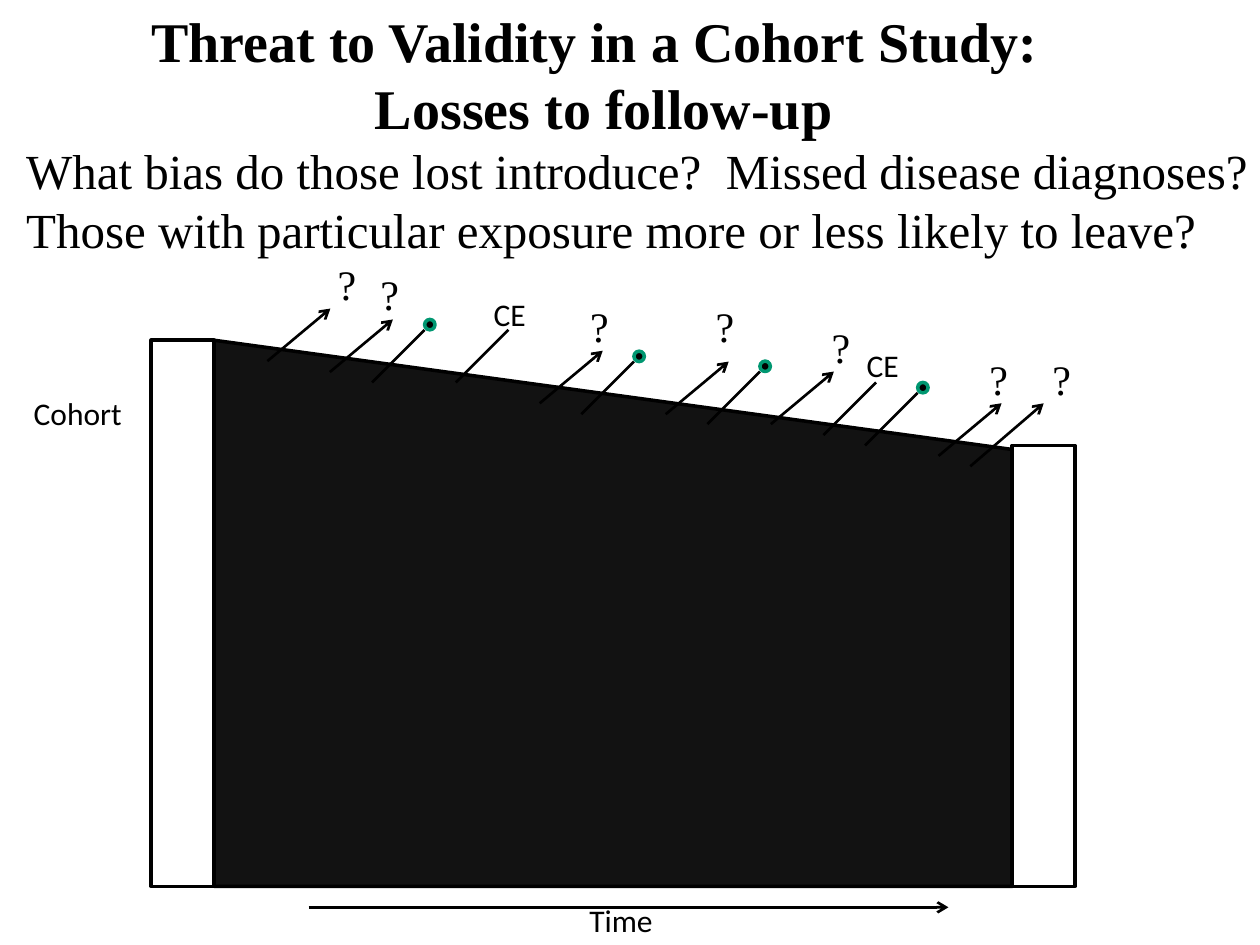
from dataclasses import dataclass

from lxml import etree
from pptx import Presentation
from pptx.dml.color import RGBColor
from pptx.enum.shapes import MSO_CONNECTOR, MSO_SHAPE
from pptx.enum.text import MSO_ANCHOR, MSO_AUTO_SIZE, PP_ALIGN
from pptx.oxml.ns import qn
from pptx.util import Cm, Pt

STRAIGHT = MSO_CONNECTOR.STRAIGHT
RECTANGLE = MSO_SHAPE.RECTANGLE
OVAL = MSO_SHAPE.OVAL
SLOPED_TOP = MSO_SHAPE.FLOWCHART_MANUAL_INPUT
TOP, MIDDLE = MSO_ANCHOR.TOP, MSO_ANCHOR.MIDDLE
LEFT, CENTER = PP_ALIGN.LEFT, PP_ALIGN.CENTER
FIT_SHAPE = MSO_AUTO_SIZE.SHAPE_TO_FIT_TEXT


@dataclass(frozen=True)
class Theme:
    ink: RGBColor = RGBColor(0x00, 0x00, 0x00)
    paper: RGBColor = RGBColor(0xFF, 0xFF, 0xFF)
    follow_up: RGBColor = RGBColor(0x12, 0x12, 0x12)
    diagnosis: RGBColor = RGBColor(0x00, 0x97, 0x71)
    serif: str = "Times New Roman"
    sans: str = "Calibri"
    title_size: float = 32
    body_size: float = 28
    mark_size: float = 24
    label_size: float = 18
    outline: float = 2
    stroke: float = 1.5


THEME = Theme()


@dataclass(frozen=True)
class Line:
    """One paragraph of text; indent is in centimetres."""
    text: str
    size: float
    font: str
    bold: bool = False
    indent: float = 0
    align: PP_ALIGN = LEFT


@dataclass(frozen=True)
class Box:
    """A position and size in centimetres."""
    left: float
    top: float
    width: float
    height: float


@dataclass(frozen=True)
class Loss:
    """A person lost to follow-up: an arrow out and a question mark."""
    x: float
    y: float
    mark_left: float
    mark_top: float
    run: float = 1.27
    rise: float = 1.06


@dataclass(frozen=True)
class Exit:
    """A person leaving by diagnosis or competing event."""
    x: float
    y: float


@dataclass(frozen=True)
class CompetingEvent(Exit):
    label_left: float
    label_top: float


EXIT_REACH = 1.06
DOT_SIZE = 0.21

LOSSES = [
    Loss(5.39, 7.28, 6.55, 5.08),
    Loss(6.65, 7.5, 7.41, 5.29),
    Loss(10.88, 8.13, 11.64, 5.93),
    Loss(13.42, 8.35, 14.17, 5.93),
    Loss(15.54, 8.55, 16.51, 6.35),
    Loss(18.92, 9.19, 19.69, 6.99),
    Loss(19.56, 9.4, 20.96, 6.99, run=1.48, rise=1.27),
]
DIAGNOSES = [Exit(7.5, 7.71), Exit(11.72, 8.35), Exit(14.26, 8.55), Exit(17.44, 8.98)]
COMPETING_EVENTS = [
    CompetingEvent(9.19, 7.71, 9.7, 5.82),
    CompetingEvent(16.6, 8.77, 17.22, 6.86),
]
HEADING = [
    Line("Threat to Validity in a Cohort Study:", THEME.title_size, THEME.serif, True, 2.52),
    Line("Losses to follow-up", THEME.title_size, THEME.serif, True, 7.03),
    Line("What bias do those lost introduce?  Missed disease diagnoses?",
         THEME.body_size, THEME.serif),
    Line("Those with particular exposure more or less likely to leave?",
         THEME.body_size, THEME.serif),
]


def draw_shape(slide, kind: MSO_SHAPE, box: Box, fill: RGBColor, line: RGBColor):
    shape = slide.shapes.add_shape(
        kind, Cm(box.left), Cm(box.top), Cm(box.width), Cm(box.height))
    shape.shadow.inherit = False
    shape.fill.solid()
    shape.fill.fore_color.rgb = fill
    shape.line.color.rgb = line
    shape.line.width = Pt(THEME.outline)
    return shape


def draw_line(slide, x: float, y: float, run: float, rise: float, arrow: bool = False) -> None:
    line = slide.shapes.add_connector(STRAIGHT, Cm(x), Cm(y), Cm(x + run), Cm(y - rise))
    line.line.color.rgb = THEME.ink
    line.line.width = Pt(THEME.stroke)
    if arrow:
        etree.SubElement(line.line._get_or_add_ln(), qn("a:tailEnd"), type="arrow")
    etree.SubElement(line._element.spPr, qn("a:effectLst"))


def draw_text(slide, box: Box, lines: list[Line], wrap: bool = False,
              anchor: MSO_ANCHOR = TOP, margin_right: float = 0.25) -> None:
    frame = slide.shapes.add_textbox(
        Cm(box.left), Cm(box.top), Cm(box.width), Cm(box.height)).text_frame
    frame.word_wrap = wrap
    frame.auto_size = FIT_SHAPE
    frame.vertical_anchor = anchor
    frame.margin_right = Cm(margin_right)
    for index, line in enumerate(lines):
        paragraph = frame.add_paragraph() if index else frame.paragraphs[0]
        paragraph.text = line.text
        paragraph.alignment = line.align
        paragraph.font.name = line.font
        paragraph.font.size = Pt(line.size)
        paragraph.font.bold = line.bold
        paragraph.font.color.rgb = THEME.ink
        if line.indent:
            properties = paragraph._p.get_or_add_pPr()
            properties.set("marL", str(Cm(line.indent)))
            properties.set("indent", "0")


def draw_label(slide, text: str, left: float, top: float, width: float) -> None:
    draw_text(slide, Box(left, top, width, 1.02), [Line(text, THEME.label_size, THEME.sans)])


def draw_loss(slide, loss: Loss) -> None:
    draw_line(slide, loss.x, loss.y, loss.run, loss.rise, arrow=True)
    mark = Line("?", THEME.mark_size, THEME.serif, align=CENTER)
    draw_text(slide, Box(loss.mark_left, loss.mark_top, 0.89, 1.27), [mark], anchor=MIDDLE)


def draw_diagnosis(slide, person: Exit) -> None:
    draw_line(slide, person.x, person.y, EXIT_REACH, EXIT_REACH)
    dot = Box(person.x + EXIT_REACH, person.y - EXIT_REACH - DOT_SIZE, DOT_SIZE, DOT_SIZE)
    draw_shape(slide, OVAL, dot, THEME.ink, THEME.diagnosis)


def draw_competing_event(slide, event: CompetingEvent) -> None:
    draw_line(slide, event.x, event.y, EXIT_REACH, EXIT_REACH)
    draw_label(slide, "CE", event.label_left, event.label_top, 1.17)


def main() -> None:
    presentation = Presentation()
    presentation.slide_width = Cm(25.4)
    presentation.slide_height = Cm(19.05)
    slide = presentation.slides.add_slide(presentation.slide_layouts[6])

    # Cohort shrinking between its start and end
    follow_up = draw_shape(slide, SLOPED_TOP, Box(4.32, 6.86, 16.09, 11.01),
                           THEME.follow_up, THEME.ink)
    follow_up._element.spPr.get_or_add_xfrm().set("flipH", "1")
    for bar in (Box(20.4, 8.98, 1.27, 8.89), Box(3.05, 6.86, 1.27, 11.01)):
        draw_shape(slide, RECTANGLE, bar, THEME.paper, THEME.ink)

    # People leaving the cohort
    for loss in LOSSES:
        draw_loss(slide, loss)
    for person in DIAGNOSES:
        draw_diagnosis(slide, person)
    for event in COMPETING_EVENTS:
        draw_competing_event(slide, event)

    # Cohort label and time axis
    draw_label(slide, "Cohort", 0.43, 7.82, 2.31)
    draw_line(slide, 6.22, 18.29, 12.9, 0, arrow=True)
    draw_label(slide, "Time", 11.63, 18.03, 1.78)

    # Heading and questions
    draw_text(slide, Box(0.28, 0, 25.12, 5.33), HEADING, wrap=True, anchor=MIDDLE,
              margin_right=0)

    presentation.save("out.pptx")


if __name__ == "__main__":
    main()
